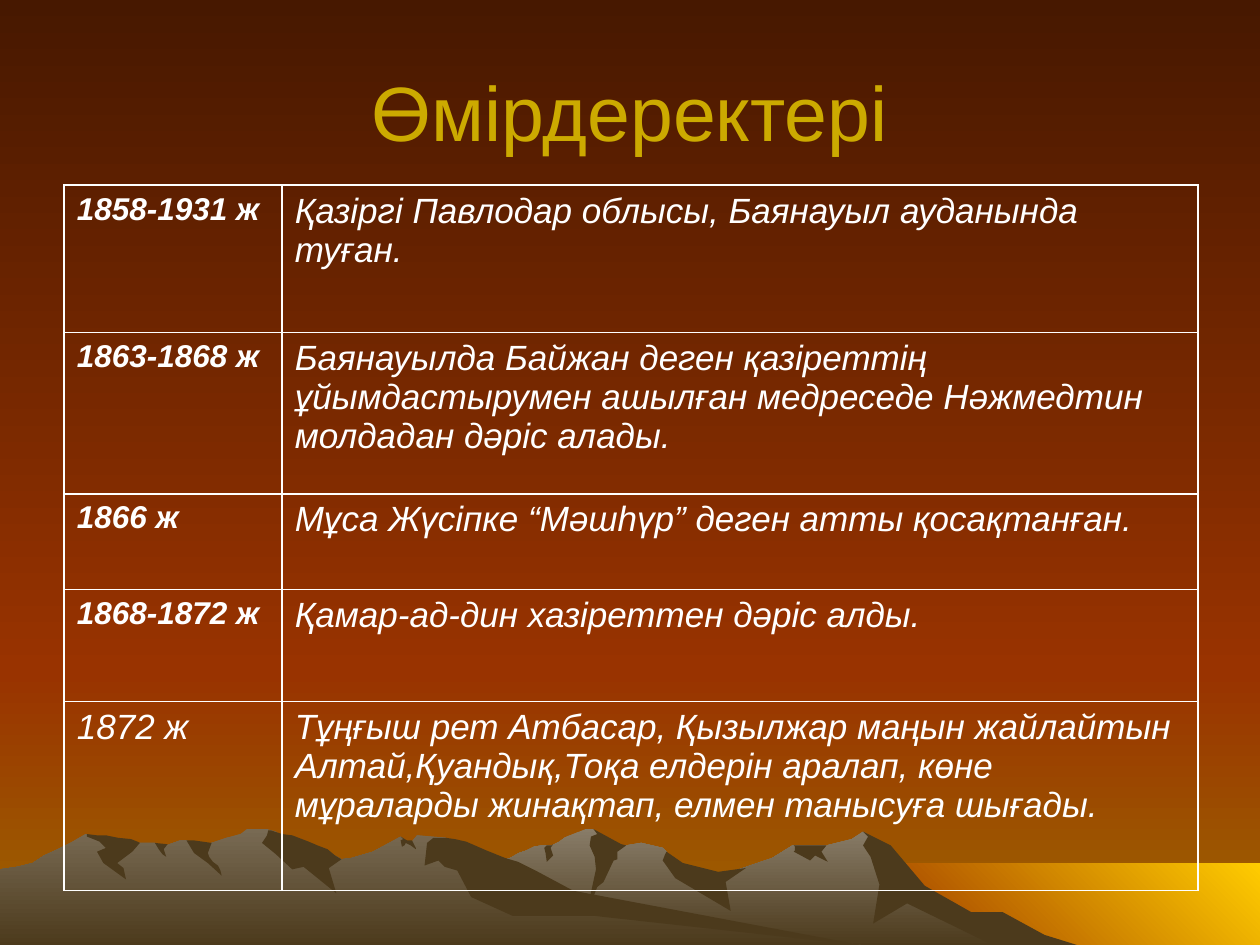
from dataclasses import dataclass

import pptx
import pptx.dml.color
import pptx.enum.text
import pptx.oxml
import pptx.oxml.ns
import pptx.util
from pptx.util import Inches

COLORS = {
    "night": "471800",
    "ember": "993300",
    "horizon": "9E6600",
    "sun": "FFCC00",
    "peak": "887C68",
    "slope": "786A53",
    "shade": "4C3A1C",
    "title": "CCAA00",
    "white": "FFFFFF",
}
FONT = "Arial"
UNIT = Inches(0.01)  # outlines are given in hundredths of an inch


@dataclass
class Outline:
    points: list[tuple[int, int]]
    start: str = "shade"
    end: str | None = None
    angle: int = 270  # counter-clockwise; 270 runs from top to bottom


@dataclass
class Event:
    years: str
    text: str
    height: float
    years_size: int = 18
    years_bold: bool = True


def box(left: int, top: int, right: int, bottom: int) -> list[tuple[int, int]]:
    return [(left, top), (right, top), (right, bottom), (left, bottom)]


SKY = [
    Outline(box(0, 533, 1000, 750), "ember", "horizon"),
    Outline(box(0, 0, 1000, 533), "night", "ember"),
    Outline(box(683, 685, 1000, 750), "ember", "sun", 45),
]

RIGHT_RANGE = [
    Outline([(802, 740), (778, 727), (764, 723), (723, 698), (702, 671), (685, 660),
             (676, 666), (656, 671), (629, 671), (613, 681), (566, 697), (536, 690),
             (529, 676), (526, 673), (509, 669), (497, 671), (486, 673), (474, 661),
             (471, 658), (465, 658), (450, 664), (448, 665), (444, 668), (438, 671),
             (430, 671), (424, 672), (418, 675), (412, 677), (405, 681), (399, 683),
             (394, 685), (355, 698), (327, 709), (277, 739), (258, 751), (821, 751)],
            "peak", "shade"),
    Outline([(796, 724), (771, 724), (734, 703), (707, 671), (685, 660), (689, 664),
             (685, 671), (691, 680), (698, 702), (693, 733), (720, 717), (792, 752),
             (858, 751), (829, 742)]),
    Outline([(471, 658), (474, 662), (469, 664), (468, 671), (472, 680), (473, 690),
             (465, 727), (474, 704), (479, 700), (487, 683), (490, 682), (490, 676),
             (497, 671), (493, 670)]),
    Outline([(529, 676), (528, 678), (526, 683), (536, 697), (580, 723), (576, 700),
             (592, 689), (570, 692), (542, 685)]),
    Outline([(650, 671), (630, 671), (631, 672), (631, 675), (630, 676), (643, 683),
             (647, 679), (657, 684), (652, 676), (656, 671)]),
    Outline([(433, 677), (432, 673), (434, 671), (438, 671), (439, 670), (437, 673),
             (439, 679), (434, 684)]),
]

LEFT_RANGE = [
    Outline([(690, 751), (667, 748), (432, 712), (354, 665), (331, 663), (327, 668),
             (323, 668), (318, 664), (296, 676), (279, 681), (271, 682), (260, 676),
             (236, 681), (223, 663), (219, 660), (212, 658), (196, 658), (191, 662),
             (180, 665), (168, 669), (160, 671), (148, 667), (143, 667), (132, 671),
             (128, 671), (123, 669), (111, 669), (94, 671), (68, 662), (56, 669),
             (46, 674), (35, 679), (26, 685), (14, 688), (0, 690), (0, 751)],
            "slope", "shade"),
    Outline([(212, 663), (208, 669), (219, 678), (232, 690), (241, 688), (267, 709),
             (261, 689), (271, 682), (266, 679), (260, 674), (252, 671), (245, 668),
             (232, 663), (224, 662), (215, 659), (213, 659)]),
    Outline([(370, 668), (361, 666), (354, 665), (344, 665), (339, 669), (337, 687),
             (348, 683), (353, 688), (363, 691), (374, 712), (407, 727), (472, 727),
             (690, 751), (683, 750), (455, 707), (427, 692), (411, 684), (401, 681),
             (386, 675)]),
    Outline([(318, 667), (320, 666), (318, 664), (323, 667), (327, 667), (330, 673),
             (330, 674), (326, 671), (322, 669), (321, 671), (319, 672)]),
    Outline([(154, 667), (161, 668), (168, 669), (165, 677), (166, 680), (169, 684),
             (173, 687), (175, 691), (176, 695), (165, 685), (154, 677), (148, 667)]),
    Outline([(133, 670), (130, 674), (132, 680), (129, 678), (126, 674), (123, 669)]),
    Outline([(109, 668), (111, 669), (105, 676), (93, 685), (98, 689), (100, 698),
             (82, 685), (77, 676), (84, 673), (79, 668), (69, 664), (69, 662),
             (77, 663), (84, 663), (94, 665), (104, 666)]),
]

EVENTS = [
    Event("1858-1931 ж", "Қазіргі Павлодар облысы, Баянауыл ауданында туған.", 1.17),
    Event("1863-1868 ж", "Баянауылда Байжан деген қазіреттің ұйымдастырумен ашылған "
          "медреседе Нәжмедтин молдадан дәріс алады.", 1.28),
    Event("1866 ж", "Мұса Жүсіпке “Мәшһүр” деген атты қосақтанған.", 0.76),
    Event("1868-1872 ж", "Қамар-ад-дин хазіреттен дәріс алды.", 0.89),
    Event("1872 ж", "Тұңғыш рет Атбасар, Қызылжар маңын жайлайтын Алтай,Қуандық,Тоқа "
          "елдерін аралап, көне мұраларды жинақтап, елмен танысуға шығады.",
          1.5, years_size=20, years_bold=False),
]
COLUMN_WIDTHS = [1.73, 7.27]


def rgb(name: str) -> pptx.dml.color.RGBColor:
    return pptx.dml.color.RGBColor.from_string(COLORS[name])


def fill_gradient(fill, start: str, end: str, angle: int = 270) -> None:
    fill.gradient()
    fill.gradient_angle = angle
    for stop, name in zip(fill.gradient_stops, (start, end)):
        stop.color.rgb = rgb(name)


def draw_outline(slide, outline: Outline) -> None:
    first, *others = outline.points
    builder = slide.shapes.build_freeform(*first, scale=UNIT)
    builder.add_line_segments(others, close=True)
    shape = builder.convert_to_shape()
    shape.shadow.inherit = False
    shape.line.fill.background()
    if outline.end:
        fill_gradient(shape.fill, outline.start, outline.end, outline.angle)
    else:
        shape.fill.solid()
        shape.fill.fore_color.rgb = rgb(outline.start)


def write_text(frame, text: str, *, size: int, color: str = "white", bold: bool = False,
               italic: bool = False, align=pptx.enum.text.PP_ALIGN.LEFT) -> None:
    frame.word_wrap = True
    paragraph = frame.paragraphs[0]
    paragraph.alignment = align
    run = paragraph.add_run()
    run.text = text
    run.font.name = FONT
    run.font.size = pptx.util.Pt(size)
    run.font.bold = bold
    run.font.italic = italic
    run.font.color.rgb = rgb(color)


def outline_cell(cell) -> None:
    properties = cell._tc.get_or_add_tcPr()
    for side in ("lnL", "lnR", "lnT", "lnB"):
        properties.append(pptx.oxml.parse_xml(
            f'<a:{side} {pptx.oxml.ns.nsdecls("a")} w="{pptx.util.Pt(1)}"><a:solidFill>'
            f'<a:srgbClr val="{COLORS["white"]}"/></a:solidFill></a:{side}>'))
    cell.fill.background()


def draw_timeline(slide, events: list[Event]) -> None:
    height = sum(event.height for event in events)
    table = slide.shapes.add_table(len(events), len(COLUMN_WIDTHS), Inches(0.51), Inches(1.47),
                                   Inches(sum(COLUMN_WIDTHS)), Inches(height)).table
    table.first_row = table.horz_banding = False
    for column, width in zip(table.columns, COLUMN_WIDTHS):
        column.width = Inches(width)
    for row, event in zip(table.rows, events):
        row.height = Inches(event.height)
        years, text = row.cells
        write_text(years.text_frame, event.years, size=event.years_size,
                   bold=event.years_bold, italic=True)
        write_text(text.text_frame, event.text, size=20, italic=True)
        for cell in (years, text):
            outline_cell(cell)


def main() -> None:
    deck = pptx.Presentation()
    deck.slide_width, deck.slide_height = Inches(10), Inches(7.5)
    slide = deck.slides.add_slide(deck.slide_layouts[6])

    # Sunset and mountains
    fill_gradient(slide.background.fill, "night", "ember")
    for outline in SKY + RIGHT_RANGE + LEFT_RANGE:
        draw_outline(slide, outline)

    # Title
    title = slide.shapes.add_textbox(Inches(0.5), Inches(0.25), Inches(9), Inches(1.25)).text_frame
    title.vertical_anchor = pptx.enum.text.MSO_ANCHOR.MIDDLE
    write_text(title, "Өмірдеректері", size=44, color="title",
               align=pptx.enum.text.PP_ALIGN.CENTER)

    # Life events
    draw_timeline(slide, EVENTS)
    deck.save("out.pptx")


if __name__ == "__main__":
    main()
